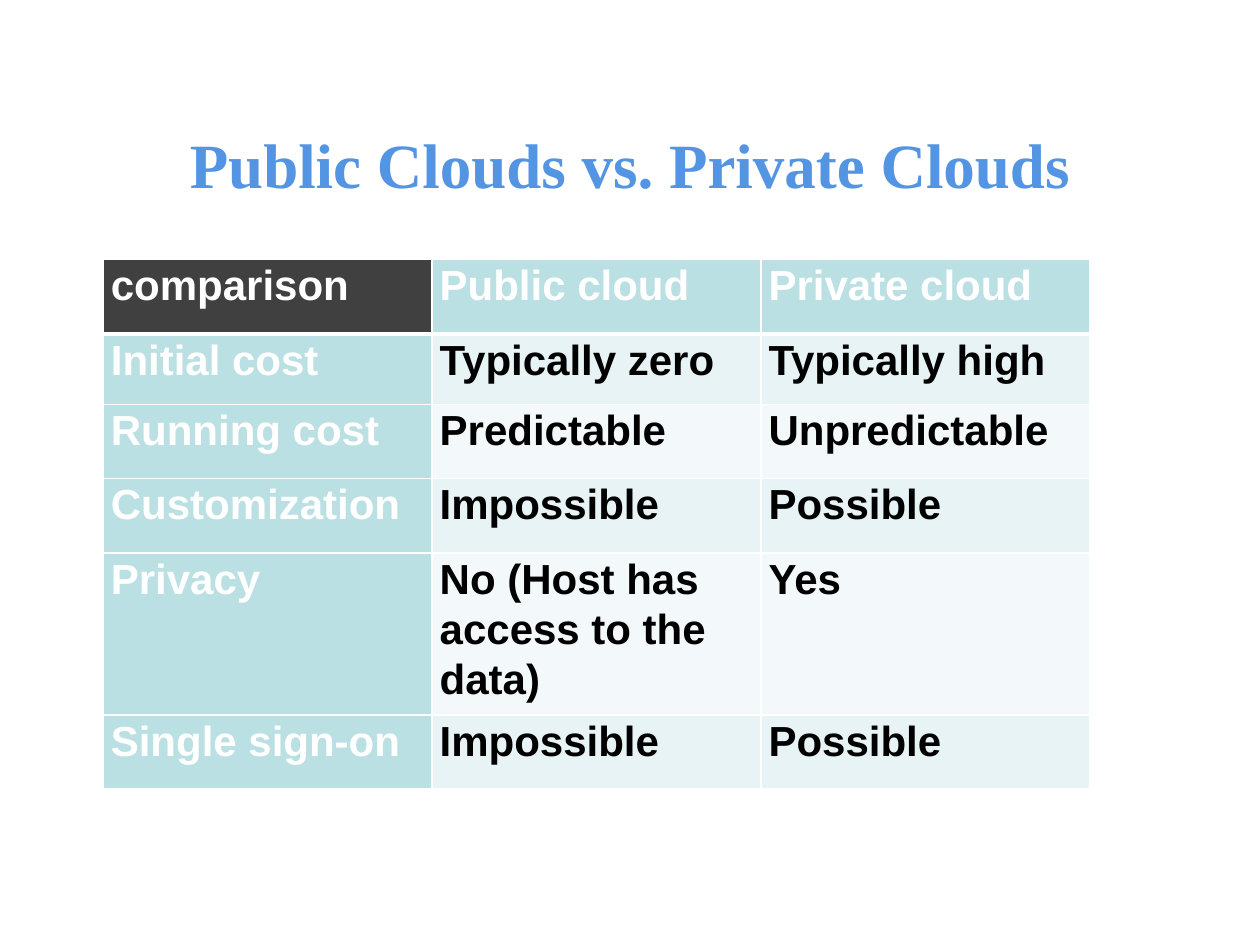
"""Build a slide that compares public and private clouds in a table."""
from lxml import etree
from pptx import Presentation
from pptx import util as u
from pptx.dml import color
from pptx.enum import text
from pptx.oxml import ns

COLORS = {
    "title": "5394E3",
    "corner": "404040",
    "header": "BBE0E3",
    "odd": "E7F3F4",
    "even": "F3F9FA",
    "light": "FFFFFF",
    "dark": "000000",
}
ROWS = [
    ("comparison", "Public cloud", "Private cloud"),
    ("Initial cost", "Typically zero", "Typically high"),
    ("Running cost", "Predictable", "Unpredictable"),
    ("Customization", "Impossible", "Possible"),
    ("Privacy", "No (Host has access to the data)", "Yes"),
    ("Single sign-on", "Impossible", "Possible"),
]
ROW_HEIGHTS = [0.59, 0.56, 0.59, 0.59, 1.03, 0.59]
COLUMN_WIDTH = 2.61


def rgb(name):
    """Return the named colour."""
    return color.RGBColor.from_string(COLORS[name])


def style_paragraph(para, font_name, size, color_name):
    """Format the runs of a paragraph in bold."""
    for span in para.runs:
        span.font.name = font_name
        span.font.size = u.Pt(size)
        span.font.bold = True
        span.font.color.rgb = rgb(color_name)


def add_title(slide, title):
    """Add the centred slide title."""
    box = slide.shapes.add_textbox(
        u.Inches(0.75), u.Inches(0.67), u.Inches(8.5), u.Inches(1.25))
    frame = box.text_frame
    frame.word_wrap = True
    frame.vertical_anchor = text.MSO_ANCHOR.MIDDLE
    frame.text = title
    para = frame.paragraphs[0]
    para.alignment = text.PP_ALIGN.CENTER
    style_paragraph(para, "Times New Roman", 36, "title")


def set_borders(cell, widths):
    """Draw the left, right, top and bottom borders, with widths in points."""
    properties = cell._tc.get_or_add_tcPr()
    for index, (side, width) in enumerate(zip("LRTB", widths)):
        line = etree.Element(ns.qn(f"a:ln{side}"), w=str(u.Pt(width)))
        fill = etree.SubElement(line, ns.qn("a:solidFill"))
        etree.SubElement(fill, ns.qn("a:srgbClr"), val=COLORS["light"])
        properties.insert(index, line)


def fill_name(row, column):
    """Choose the fill of a cell from its place in the table."""
    if row == 0 and column == 0:
        return "corner"
    if row == 0 or column == 0:
        return "header"
    return "odd" if row % 2 else "even"


def fill_cell(cell, row, column):
    """Write and format one table cell."""
    cell.text_frame.text = ROWS[row][column]
    cell.margin_left = cell.margin_right = u.Inches(0.06)
    cell.margin_top = cell.margin_bottom = 0
    para = cell.text_frame.paragraphs[0]
    para.line_spacing = 1.07
    style_paragraph(para, "Arial", 24, "dark" if row and column else "light")
    cell.fill.solid()
    cell.fill.fore_color.rgb = rgb(fill_name(row, column))
    set_borders(cell, (1, 1, 3 if row == 1 else 1, 3 if row == 0 else 1))


def add_comparison(slide):
    """Add the comparison table."""
    columns = len(ROWS[0])
    table = slide.shapes.add_table(
        len(ROWS), columns, u.Inches(0.82), u.Inches(2.06),
        u.Inches(COLUMN_WIDTH * columns), u.Inches(sum(ROW_HEIGHTS))).table
    for row, height in enumerate(ROW_HEIGHTS):
        table.rows[row].height = u.Inches(height)
        for column in range(columns):
            fill_cell(table.cell(row, column), row, column)


def main():
    """Build and save the deck."""
    deck = Presentation()
    deck.slide_width = u.Inches(10)
    deck.slide_height = u.Inches(7.5)
    slide = deck.slides.add_slide(deck.slide_layouts[6])
    add_title(slide, "Public Clouds vs. Private Clouds")
    add_comparison(slide)
    deck.save("out.pptx")


if __name__ == "__main__":
    main()
